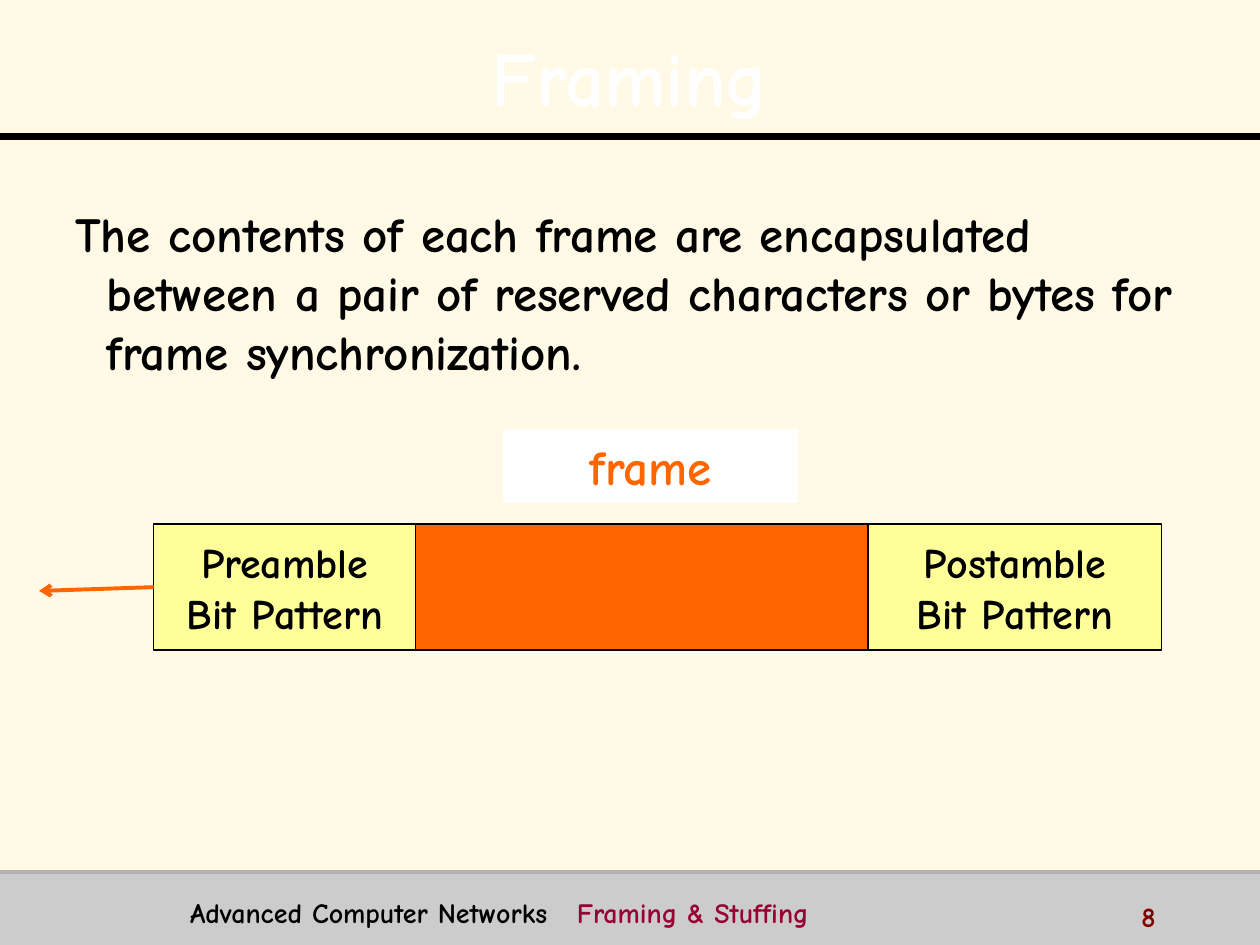
from lxml import etree
from pptx import Presentation
from pptx.dml.color import RGBColor
from pptx.enum.shapes import MSO_CONNECTOR, MSO_SHAPE
from pptx.enum.text import MSO_ANCHOR, PP_ALIGN
from pptx.oxml.ns import qn
from pptx.util import Inches, Pt

RECTANGLE = MSO_SHAPE.RECTANGLE
STRAIGHT = MSO_CONNECTOR.STRAIGHT
TOP, MIDDLE = MSO_ANCHOR.TOP, MSO_ANCHOR.MIDDLE
LEFT, CENTER = PP_ALIGN.LEFT, PP_ALIGN.CENTER

FONT = "Comic Neue"
WIDTH, HEIGHT = 10, 7.5
HEADER_Y, FOOTER_Y = 1.08, 6.92
FRAME_LEFT, FRAME_TOP, FRAME_HEIGHT = 1.22, 4.16, 1
BLACK, ORANGE, YELLOW, WHITE = "000000", "FF6600", "FFFF99", "FFFFFF"

TITLE = "Framing"
BODY = ("The contents of each frame are encapsulated between a pair of "
        "reserved characters or bytes for frame synchronization.")
FOOTER = [("Advanced Computer Networks\t", BLACK), ("Framing & Stuffing", "990033")]
PAGE_NUMBER = "8"
FRAME_PARTS = [
    (2.08, YELLOW, ["Preamble", "Bit Pattern"]),
    (3.59, ORANGE, []),
    (2.33, YELLOW, ["Postamble", "Bit Pattern"]),
]


def color(value):
    return RGBColor.from_string(value)


def write(shape, lines, size, text_color, align=LEFT, anchor=TOP, wrap=True):
    text_frame = shape.text_frame
    text_frame.word_wrap = wrap
    text_frame.vertical_anchor = anchor
    text_frame.text = "\n".join(lines)
    for paragraph in text_frame.paragraphs:
        paragraph.alignment = align
        style(paragraph.font, size, text_color)
    return text_frame.paragraphs[0]


def style(font, size, text_color):
    font.name, font.size, font.bold = FONT, Pt(size), True
    font.color.rgb = color(text_color)


def add_text(slide, box, lines, size, text_color, **options):
    shape = slide.shapes.add_textbox(*map(Inches, box))
    return write(shape, lines, size, text_color, **options)


def add_rectangle(slide, box, fill, line=None):
    shape = slide.shapes.add_shape(RECTANGLE, *map(Inches, box))
    shape.shadow.inherit = False
    shape.fill.solid()
    shape.fill.fore_color.rgb = color(fill)
    if line:
        shape.line.color.rgb = color(line)
        shape.line.width = Pt(0.75)
    else:
        shape.line.fill.background()
    return shape


def add_line(slide, ends, line_color, width):
    connector = slide.shapes.add_connector(STRAIGHT, *map(Inches, ends))
    connector.line.color.rgb = color(line_color)
    connector.line.width = Pt(width)
    etree.SubElement(connector._element.spPr, qn("a:effectLst"))
    return connector


def add_text_shadow(run):
    effects = etree.Element(qn("a:effectLst"))
    shadow = etree.SubElement(effects, qn("a:outerShdw"), dist="35921", dir="2700000")
    etree.SubElement(shadow, qn("a:srgbClr"), val=BLACK)
    run.font._element.find(qn("a:solidFill")).addnext(effects)


def add_master_parts(slide):
    add_rectangle(slide, (0, FOOTER_Y, WIDTH, HEIGHT - FOOTER_Y), "CCCCCC")
    add_line(slide, (0, HEADER_Y, WIDTH, HEADER_Y), BLACK, 4)
    add_line(slide, (0, FOOTER_Y, WIDTH, FOOTER_Y), "B2B2B2", 2)


def add_texts(slide):
    title = add_text(slide, (0.2, 0.13, 9.6, 0.87), [TITLE], 44, WHITE,
                     align=CENTER, anchor=MIDDLE)
    title.line_spacing = 1.1
    style(title.runs[0].font, 44, WHITE)
    add_text_shadow(title.runs[0])

    body = add_text(slide, (0.5, 1.57, 9, 1.86), [BODY], 28, BLACK)
    properties = body._p.get_or_add_pPr()
    properties.set("marL", str(Inches(0.25)))
    properties.set("indent", str(Inches(-0.25)))

    box = slide.shapes.add_textbox(*map(Inches, (1.41, 7.06, 7.28, 0.31)))
    box.text_frame.word_wrap = True
    footer = box.text_frame.paragraphs[0]
    tabs = etree.SubElement(footer._p.get_or_add_pPr(), qn("a:tabLst"))
    etree.SubElement(tabs, qn("a:tab"), pos=str(Inches(3.07)), algn="l")
    for text, text_color in FOOTER:
        run = footer.add_run()
        run.text = text
        style(run.font, 16, text_color)

    add_text(slide, (8.96, 7.09, 1, 0.25), [PAGE_NUMBER], 16, "800000")


def add_frame(slide):
    left = FRAME_LEFT
    parts = []
    for width, fill, lines in FRAME_PARTS:
        part = add_rectangle(slide, (left, FRAME_TOP, width, FRAME_HEIGHT), fill, BLACK)
        if lines:
            write(part, lines, 24, BLACK, align=CENTER, anchor=MIDDLE, wrap=False)
        parts.append(part)
        left += width

    label = add_rectangle(slide, (4, 3.41, 2.33, 0.58), WHITE, WHITE)
    write(label, ["frame"], 28, ORANGE, align=CENTER, anchor=MIDDLE, wrap=False)

    middle = FRAME_TOP + FRAME_HEIGHT / 2
    arrow = add_line(slide, (FRAME_LEFT, middle, 0.31, 4.69), ORANGE, 2.25)
    arrow.begin_connect(parts[0], 1)
    etree.SubElement(arrow.line._get_or_add_ln(), qn("a:tailEnd"), type="arrow")


def main():
    presentation = Presentation()
    presentation.slide_width, presentation.slide_height = Inches(WIDTH), Inches(HEIGHT)
    slide = presentation.slides.add_slide(presentation.slide_layouts[6])
    slide.background.fill.solid()
    slide.background.fill.fore_color.rgb = color("FFF9E6")
    add_master_parts(slide)
    add_texts(slide)
    add_frame(slide)
    presentation.save("out.pptx")


if __name__ == "__main__":
    main()
